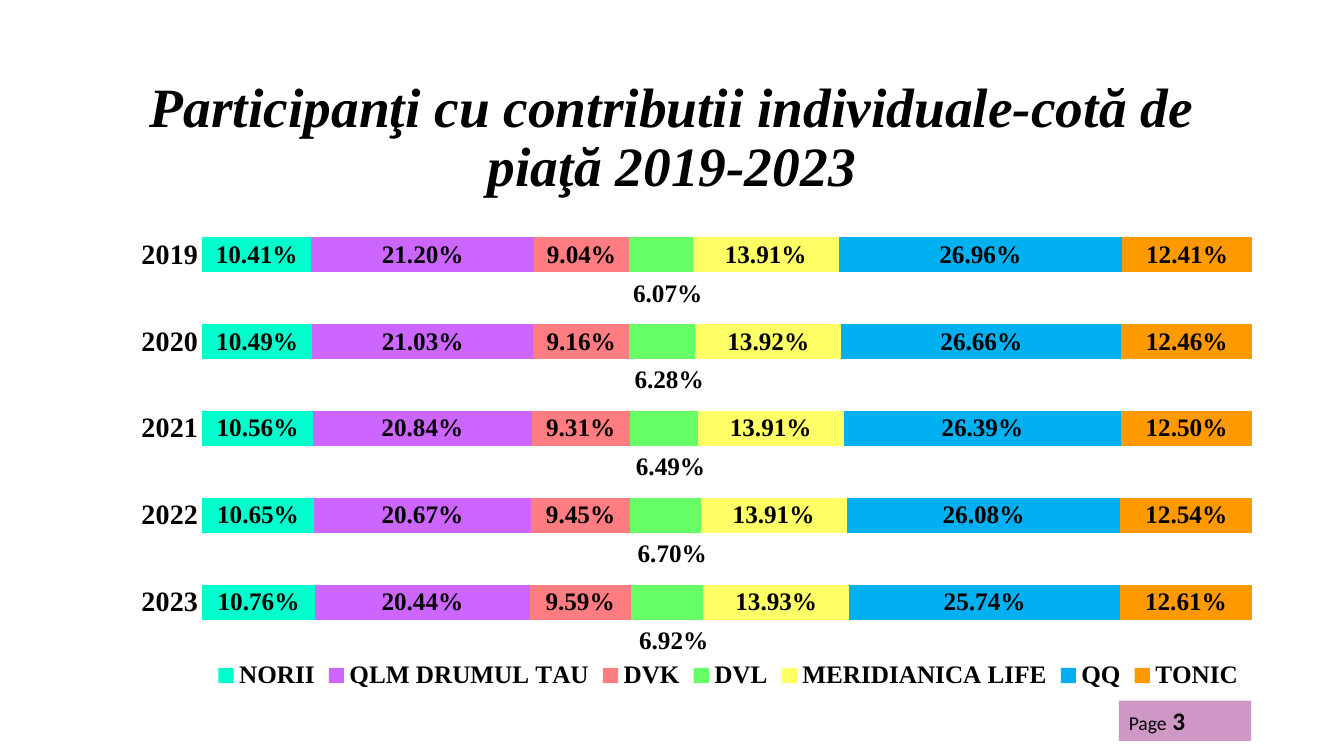
from dataclasses import dataclass

import pptx
import pptx.chart.data
import pptx.dml.color
import pptx.enum.chart
import pptx.enum.shapes
import pptx.enum.text
import pptx.oxml
import pptx.oxml.ns
import pptx.util

Pt = pptx.util.Pt
qn = pptx.oxml.ns.qn
SERIF = "Times New Roman"
SANS = "Calibri"
PERCENT = "0.00%"
COLORS = {
    "text": "000000", "page": "9F318D", "aqua": "00FFCC", "violet": "CC66FF",
    "coral": "FF7C80", "green": "66FF66", "yellow": "FFFF66", "blue": "00B0F0",
    "orange": "FF9900",
}
YEARS = ["2019", "2020", "2021", "2022", "2023"]
TITLE_FORMAT = {"name": SERIF, "size": Pt(39.6), "bold": True, "italic": True}
CATEGORY_FORMAT = {"name": SERIF, "size": Pt(20), "bold": True}
LABEL_FORMAT = {"name": SERIF, "size": Pt(18), "bold": True}
PAGE_FORMAT = {"name": SANS, "size": Pt(14), "bold": False}
NUMBER_FORMAT = {"name": SANS, "size": Pt(18), "bold": True}


@dataclass
class Box:
    left: float
    top: float
    width: float
    height: float

    def in_points(self) -> list:
        return [Pt(value) for value in (self.left, self.top, self.width, self.height)]


@dataclass
class Fund:
    name: str
    color: str
    shares: list[float]
    labels_below: bool = False


FUNDS = [
    Fund("NORII", "aqua", [0.1041, 0.1049, 0.1056, 0.1065, 0.1076]),
    Fund("QLM DRUMUL TAU", "violet", [0.2120, 0.2103, 0.2084, 0.2067, 0.2044]),
    Fund("DVK", "coral", [0.0904, 0.0916, 0.0931, 0.0945, 0.0959]),
    Fund("DVL", "green", [0.0607, 0.0628, 0.0649, 0.0670, 0.0692], True),
    Fund("MERIDIANICA LIFE", "yellow", [0.1391, 0.1392, 0.1391, 0.1391, 0.1393]),
    Fund("QQ", "blue", [0.2696, 0.2666, 0.2639, 0.2608, 0.2574]),
    Fund("TONIC", "orange", [0.1241, 0.1246, 0.1250, 0.1254, 0.1261]),
]


def rgb(name: str) -> pptx.dml.color.RGBColor:
    return pptx.dml.color.RGBColor.from_string(COLORS[name])


def format_font(font, values: dict) -> None:
    for attribute, value in values.items():
        setattr(font, attribute, value)
    font.color.rgb = rgb("text")


def add_run(paragraph, text: str, values: dict) -> None:
    run = paragraph.add_run()
    run.text = text
    format_font(run.font, values)


def set_layout(parent, position: int, **settings) -> None:
    """Give a chart element a manual layout, as its child at the position."""
    for layout in parent.findall(qn("c:layout")):
        parent.remove(layout)
    items = "".join(f'<c:{tag} val="{value}"/>' for tag, value in settings.items())
    parent.insert(position, pptx.oxml.parse_xml(
        f'<c:layout {pptx.oxml.ns.nsdecls("c")}>'
        f"<c:manualLayout>{items}</c:manualLayout></c:layout>"))


def add_title(slide, box: Box) -> None:
    shape = slide.shapes.add_textbox(*box.in_points())
    frame = shape.text_frame
    frame.word_wrap = True
    frame.vertical_anchor = pptx.enum.text.MSO_ANCHOR.MIDDLE
    paragraph = frame.paragraphs[0]
    paragraph.alignment = pptx.enum.text.PP_ALIGN.CENTER
    paragraph.line_spacing = 0.9
    add_run(paragraph, "Participanţi cu contributii individuale-cotă de piaţă 2019-2023",
            TITLE_FORMAT)


def add_page_tag(slide, box: Box) -> None:
    shape = slide.shapes.add_shape(
        pptx.enum.shapes.MSO_SHAPE.RECTANGLE, *box.in_points())
    shape.shadow.inherit = False
    shape.line.fill.background()
    shape.fill.solid()
    shape.fill.fore_color.rgb = rgb("page")
    color = shape.fill._xPr.find(".//" + qn("a:srgbClr"))
    color.append(pptx.oxml.parse_xml(
        f'<a:alpha {pptx.oxml.ns.nsdecls("a")} val="50000"/>'))
    shape.text_frame.vertical_anchor = pptx.enum.text.MSO_ANCHOR.MIDDLE
    paragraph = shape.text_frame.paragraphs[0]
    paragraph.alignment = pptx.enum.text.PP_ALIGN.LEFT
    add_run(paragraph, "Page", PAGE_FORMAT)
    add_run(paragraph, " 3", NUMBER_FORMAT)


def format_series(series, fund: Fund) -> None:
    series.format.fill.solid()
    series.format.fill.fore_color.rgb = rgb(fund.color)
    labels = series.data_labels
    labels.show_value = True
    labels.number_format = PERCENT
    labels.number_format_is_linked = False
    format_font(labels.font, LABEL_FORMAT)
    for leader_lines in labels._element.findall(qn("c:showLeaderLines")):
        leader_lines.set("val", "0")
    if fund.labels_below:
        for index in range(len(YEARS)):
            label = series.points[index].data_label
            format_font(label.font, LABEL_FORMAT)
            element = labels._element.findall(qn("c:dLbl"))[index]
            set_layout(element, 1, x=0.006, y=0.072)


def add_share_chart(slide, box: Box) -> None:
    data = pptx.chart.data.CategoryChartData(number_format=PERCENT)
    data.categories = YEARS
    for fund in FUNDS:
        data.add_series(fund.name, fund.shares)
    chart = slide.shapes.add_chart(
        pptx.enum.chart.XL_CHART_TYPE.BAR_STACKED_100, *box.in_points(), data).chart
    chart.has_title = False
    format_font(chart.font, {"name": SANS, "size": Pt(10)})

    plot = chart.plots[0]
    plot.gap_width = 150
    plot.overlap = 100
    plot.vary_by_categories = False
    for series, fund in zip(plot.series, FUNDS):
        format_series(series, fund)

    years = chart.category_axis
    years.reverse_order = True
    years.major_tick_mark = pptx.enum.chart.XL_TICK_MARK.NONE
    years.format.line.fill.background()
    format_font(years.tick_labels.font, CATEGORY_FORMAT)
    shares = chart.value_axis
    shares.minimum_scale = 0
    shares.maximum_scale = 1
    shares.has_major_gridlines = False
    shares.visible = False

    chart.has_legend = True
    chart.legend.position = pptx.enum.chart.XL_LEGEND_POSITION.BOTTOM
    chart.legend.include_in_layout = False
    format_font(chart.legend.font, LABEL_FORMAT)
    set_layout(chart.legend._element, 1, xMode="edge", yMode="edge",
               x=0.08, y=0.87, w=0.915, h=0.07)
    set_layout(chart._chartSpace.chart.plotArea, 0, layoutTarget="inner",
               xMode="edge", yMode="edge", x=0.078, y=0.046, w=0.917, h=0.804)


def main() -> None:
    presentation = pptx.Presentation()
    presentation.slide_width = Pt(960)
    presentation.slide_height = Pt(540)
    slide = presentation.slides.add_slide(presentation.slide_layouts[6])
    add_title(slide, Box(66, 65.5, 828, 67.5))
    add_page_tag(slide, Box(799.2, 500.4, 94.5, 28.8))
    add_share_chart(slide, Box(80.6, 133.2, 818, 386))
    presentation.save("out.pptx")


if __name__ == "__main__":
    main()
